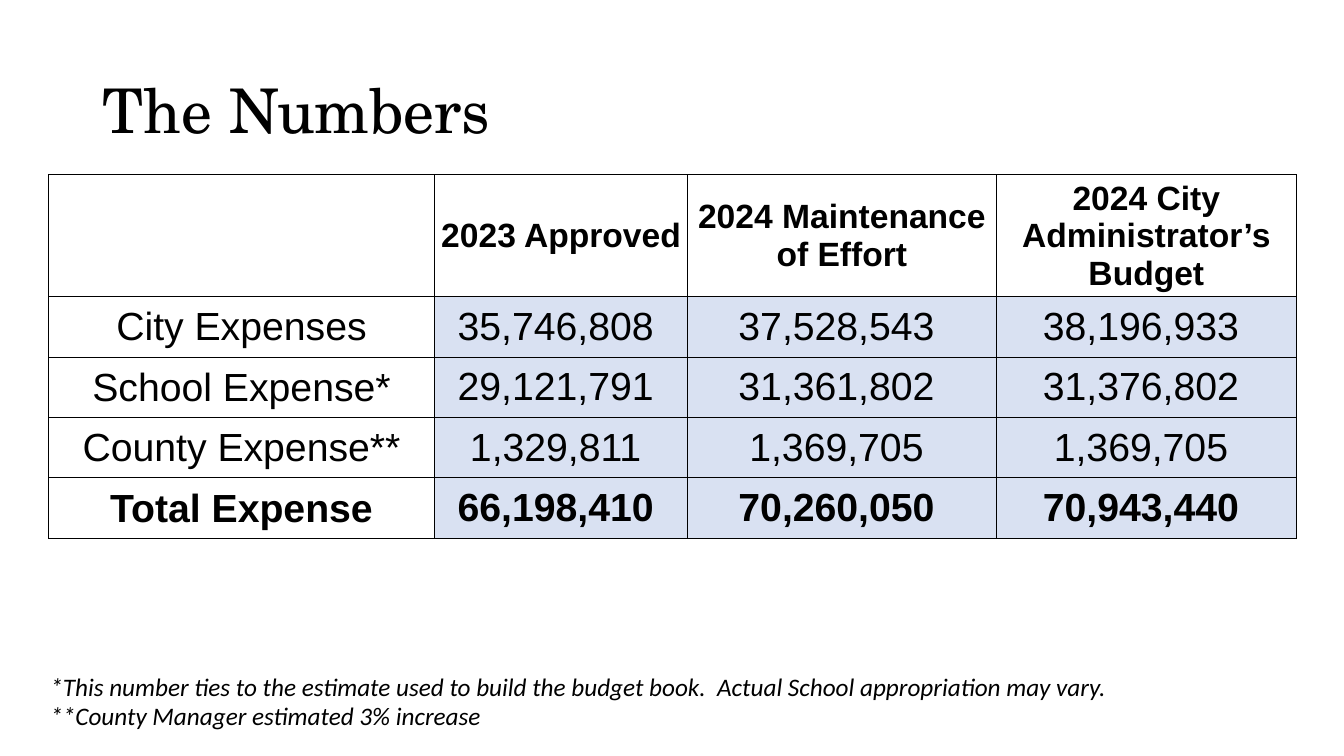
from lxml import etree
from pptx import Presentation
from pptx.dml.color import RGBColor
from pptx.enum.text import MSO_ANCHOR, PP_ALIGN
from pptx.oxml.ns import qn
from pptx.util import Inches, Pt

BLACK = RGBColor(0x00, 0x00, 0x00)
PALE_BLUE = RGBColor(0xD9, 0xE1, 0xF2)
CENTER = PP_ALIGN.CENTER
MIDDLE = MSO_ANCHOR.MIDDLE
TOP = MSO_ANCHOR.TOP

TITLE = {"name": "TeX Gyre Schola", "size": Pt(44)}
HEADER = {"name": "Arial", "size": Pt(24), "bold": True}
BODY = {"name": "Arial", "size": Pt(28), "bold": False}
TOTAL = {**BODY, "bold": True}
NOTE = {"name": "Calibri", "size": Pt(18), "italic": True}

COL_WIDTHS = [3.83, 2.51, 3.06, 2.98]
ROW_HEIGHTS = [1.21, 0.6, 0.6, 0.6, 0.6]
EXPENSES = [
    ["", "2023 Approved", "2024 Maintenance of Effort", "2024 City Administrator’s Budget"],
    ["City Expenses", "35,746,808 ", "37,528,543 ", "38,196,933 "],
    ["School Expense*", "29,121,791 ", "31,361,802 ", "31,376,802 "],
    ["County Expense**", "1,329,811 ", "1,369,705 ", "1,369,705 "],
    ["Total Expense", "66,198,410 ", "70,260,050 ", "70,943,440 "],
]
FOOTNOTES = [
    (6.61, 11.65, "*This number ties to the estimate used to build the budget book.  "
                  "Actual School appropriation may vary."),
    (6.9, 4.52, "**County Manager estimated 3% increase"),
]


class SlideBuilder:
    def __init__(self, slide, color=BLACK, border=Pt(0.5)):
        self.slide = slide
        self.color = color
        self.border = border

    def run(self, p, text, style):
        r = p.add_run()
        r.text = text
        for name, value in style.items():
            setattr(r.font, name, value)
        r.font.color.rgb = self.color

    def text(self, left, top, width, height, text, style, anchor=TOP, wrap=True, spacing=1.0):
        sp = self.slide.shapes.add_textbox(Inches(left), Inches(top), Inches(width), Inches(height))
        tf = sp.text_frame
        tf.word_wrap = wrap
        tf.vertical_anchor = anchor
        p = tf.paragraphs[0]
        p.line_spacing = spacing
        self.run(p, text, style)

    def borders(self, cell):
        tc_pr = cell._tc.get_or_add_tcPr()
        for side in ("a:lnL", "a:lnR", "a:lnT", "a:lnB"):
            ln = etree.SubElement(tc_pr, qn(side), w=str(int(self.border)))
            fill = etree.SubElement(ln, qn("a:solidFill"))
            etree.SubElement(fill, qn("a:srgbClr"), val=str(self.color))

    def cell(self, cell, text, style, shaded):
        inset = Inches(0 if shaded else 0.01)
        layout = {"margin_left": inset, "margin_right": inset, "margin_top": inset,
                  "margin_bottom": 0, "vertical_anchor": MIDDLE}
        for name, value in layout.items():
            setattr(cell, name, value)
        self.borders(cell)
        if shaded:
            cell.fill.solid()
            cell.fill.fore_color.rgb = PALE_BLUE
        else:
            cell.fill.background()
        if text:
            p = cell.text_frame.paragraphs[0]
            p.alignment = CENTER
            self.run(p, text, style)

    def table(self, left, top, col_widths, row_heights, rows):
        frame = self.slide.shapes.add_table(
            len(rows), len(col_widths), Inches(left), Inches(top),
            Inches(sum(col_widths)), Inches(sum(row_heights)))
        table = frame.table
        table.first_row = table.horz_banding = False
        for column, width in zip(table.columns, col_widths):
            column.width = Inches(width)
        for row, height in zip(table.rows, row_heights):
            row.height = Inches(height)
        styles = [HEADER] + [BODY] * (len(rows) - 2) + [TOTAL]
        for i, (values, style) in enumerate(zip(rows, styles)):
            for j, value in enumerate(values):
                self.cell(table.cell(i, j), value, style, shaded=i > 0 and j > 0)


def main():
    prs = Presentation()
    prs.slide_width, prs.slide_height = Inches(13.33), Inches(7.5)
    s = SlideBuilder(prs.slides.add_slide(prs.slide_layouts[6]))
    s.text(0.92, 0.4, 11.5, 1.45, "The Numbers", TITLE, anchor=MIDDLE, spacing=0.9)
    s.table(0.48, 1.73, COL_WIDTHS, ROW_HEIGHTS, EXPENSES)
    for top, width, note in FOOTNOTES:
        s.text(0.4, top, width, 0.4, note, NOTE, wrap=False)
    prs.save("out.pptx")


if __name__ == "__main__":
    main()
